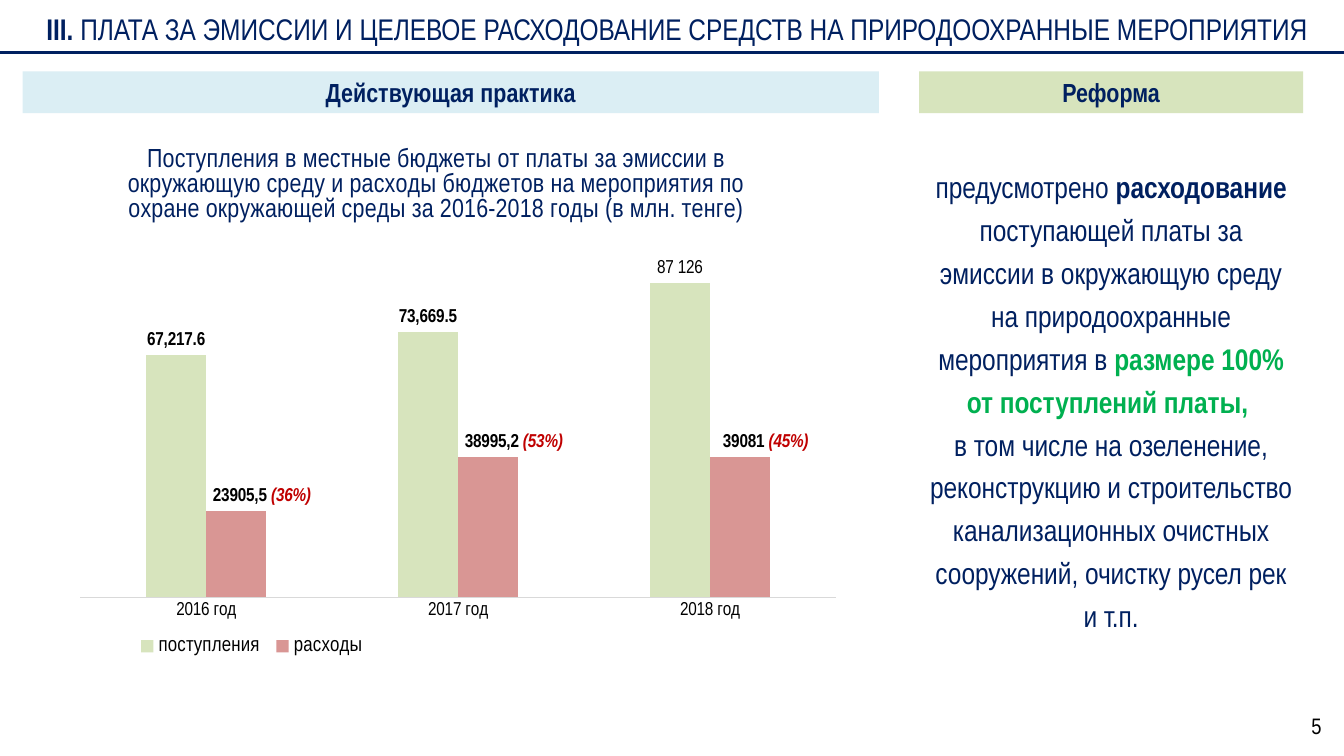
from lxml import etree
from pptx import Presentation
from pptx.chart.data import CategoryChartData
from pptx.dml.color import RGBColor
from pptx.enum.chart import XL_CHART_TYPE as CT, XL_LABEL_POSITION as LP
from pptx.enum.chart import XL_LEGEND_POSITION as LEG, XL_TICK_MARK as TM
from pptx.enum.shapes import MSO_CONNECTOR as CONN, MSO_SHAPE as SHAPE
from pptx.enum.text import MSO_ANCHOR as ANCHOR, PP_ALIGN as ALIGN
from pptx.oxml.ns import qn
from pptx.util import Cm, Pt

COLORS = {
    "navy": "002060", "white": "FFFFFF", "black": "000000", "blue": "DBEEF4",
    "green": "D7E4BD", "pink": "D99694", "accent": "00B050", "red": "C00000",
    "grey": "D9D9D9",
}
FONT = "Arial Narrow"


def rgb(name):
    return RGBColor.from_string(COLORS[name])


def fill(target, color):
    target.fill.solid()
    target.fill.fore_color.rgb = rgb(color)


def style(font, size, color="navy", bold=None, italic=None):
    font.name = FONT
    font.size = Pt(size)
    font.color.rgb = rgb(color)
    font.bold = bold
    font.italic = italic


def write(p, runs, size):
    p.alignment = ALIGN.CENTER
    style(p.font, size)
    for text, bold, color in runs:
        r = p.add_run()
        r.text = text
        r.font.bold = bold
        r.font.color.rgb = rgb(color)


def set_margins(tf):
    tf.word_wrap = True
    tf.margin_left = tf.margin_right = Cm(0.2)
    tf.margin_top = tf.margin_bottom = Cm(0.1)


def add_band(slide, box, color, runs, size):
    sp = slide.shapes.add_shape(SHAPE.RECTANGLE, *map(Cm, box))
    sp.shadow.inherit = False
    sp.line.fill.background()
    fill(sp, color)
    tf = sp.text_frame
    set_margins(tf)
    tf.vertical_anchor = ANCHOR.MIDDLE
    write(tf.paragraphs[0], runs, size)


def add_text(slide, box, paragraphs, size, spacing=None):
    tf = slide.shapes.add_textbox(*map(Cm, box)).text_frame
    set_margins(tf)
    for i, runs in enumerate(paragraphs):
        p = tf.add_paragraph() if i else tf.paragraphs[0]
        write(p, runs, size)
        p.line_spacing = spacing


def add_rule(slide, y):
    line = slide.shapes.add_connector(CONN.STRAIGHT, 0, Cm(y), Cm(25.4), Cm(y))
    line.line.color.rgb = rgb("navy")
    line.line.width = Pt(1.5)
    etree.SubElement(line._element.spPr, qn("a:effectLst"))


def place(parent, index, **values):
    for old in parent.findall(qn("c:layout")):
        parent.remove(old)
    layout = etree.Element(qn("c:layout"))
    manual = etree.SubElement(layout, qn("c:manualLayout"))
    for tag, value in values.items():
        etree.SubElement(manual, qn(f"c:{tag}")).set("val", str(value))
    parent.insert(index, layout)


def label_point(series, index, parts):
    label = series.points[index].data_label
    p = label.text_frame.paragraphs[0]
    for text, color, bold, italic in parts:
        r = p.add_run()
        r.text = text
        style(r.font, 10, color, bold, italic)
    label.position = LP.OUTSIDE_END


def add_budget_chart(slide):
    data = CategoryChartData(number_format="#,##0.0")
    data.categories = ["2016 год", "2017 год", "2018 год"]
    data.add_series("поступления", [67217.6, 73669.5, 87126])
    data.add_series("расходы", [23905.5, 38995.2, 39081])
    box = map(Cm, (0.38, 2.64, 16.23, 10.82))
    chart = slide.shapes.add_chart(CT.COLUMN_CLUSTERED, *box, data).chart
    style(chart.font, 10, "black")

    p = chart.chart_title.text_frame.paragraphs[0]
    r = p.add_run()
    r.text = ("Поступления в местные бюджеты от платы за эмиссии в окружающую "
              "среду и расходы бюджетов на мероприятия по охране окружающей "
              "среды за 2016-2018 годы (в млн. тенге)")
    style(r.font, 14, bold=False)
    place(chart.chart_title._element, 1,
          xMode="edge", yMode="edge", x=0.12, y=0)

    chart.has_legend = True
    chart.legend.position = LEG.BOTTOM
    chart.legend.include_in_layout = False
    style(chart.legend.font, 11, "black")
    place(chart.legend._element, 1,
          xMode="edge", yMode="edge", x=0.13, y=0.85, w=0.28, h=0.07)

    axis = chart.category_axis
    axis.major_tick_mark = TM.NONE
    axis.format.line.color.rgb = rgb("grey")
    axis.format.line.width = Pt(0.75)
    style(axis.tick_labels.font, 10, "black")
    values = chart.value_axis
    values.visible = False
    values.has_major_gridlines = False
    values.minimum_scale, values.maximum_scale = 0, 100000
    values.major_unit = 20000

    plot = chart.plots[0]
    plot.gap_width = 219
    plot.overlap = 0
    plot.vary_by_categories = False
    place(chart._chartSpace.chart.plotArea, 0, layoutTarget="inner",
          xMode="edge", yMode="edge", x=0.07, y=0.17, w=0.88, h=0.63)

    for series, color in zip(plot.series, ("green", "pink")):
        fill(series.format, color)
        labels = series.data_labels
        labels.show_value = True
        labels.position = LP.OUTSIDE_END
        labels.number_format = "#,##0.0"
        labels.number_format_is_linked = False
        style(labels.font, 10, "black", True)

    income, spending = plot.series
    label_point(income, 2, [("87 126", "black", False, False)])
    shares = [("23905,5 ", "(36%)"), ("38995,2 ", "(53%)"), ("39081 ", "(45%)")]
    for i, (amount, share) in enumerate(shares):
        label_point(spending, i, [(amount, "black", True, False),
                                  (share, "red", True, True)])
    for label in spending._element.iter(qn("c:dLbl")):
        place(label, 1, x=0.03, y=0)


def main():
    prs = Presentation()
    prs.slide_width, prs.slide_height = Cm(25.4), Cm(14.29)
    slide = prs.slides.add_slide(prs.slide_layouts[6])

    add_band(slide, (0.2, 0.05, 25.2, 0.97), "white", [
        ("III. ", True, "navy"),
        ("ПЛАТА ЗА ЭМИССИИ И ЦЕЛЕВОЕ РАСХОДОВАНИЕ СРЕДСТВ НА "
         "ПРИРОДООХРАННЫЕ МЕРОПРИЯТИЯ", False, "navy")], 16)
    add_text(slide, (24.36, 13.36, 1.04, 0.76), [[("5", False, "black")]], 12)

    for left, width, color, text in (
            (0.43, 16.18, "blue", "Действующая практика"),
            (17.37, 7.26, "green", "Реформа")):
        add_band(slide, (left, 1.35, width, 0.79), color,
                 [(text, True, "navy")], 14)

    add_text(slide, (17.37, 2.95, 7.26, 10.03), [
        [("предусмотрено ", False, "navy"),
         ("расходование", True, "navy"),
         (" поступающей платы за эмиссии в окружающую среду на "
          "природоохранные мероприятия в ", False, "navy"),
         ("размере 100% от поступлений платы, ", True, "accent")],
        [("в том числе на озеленение, реконструкцию и строительство "
          "канализационных очистных сооружений, очистку русел рек и т.п.",
          False, "navy")]], 16, spacing=1.2)

    add_budget_chart(slide)
    add_rule(slide, 0.99)
    prs.save("out.pptx")


if __name__ == "__main__":
    main()
